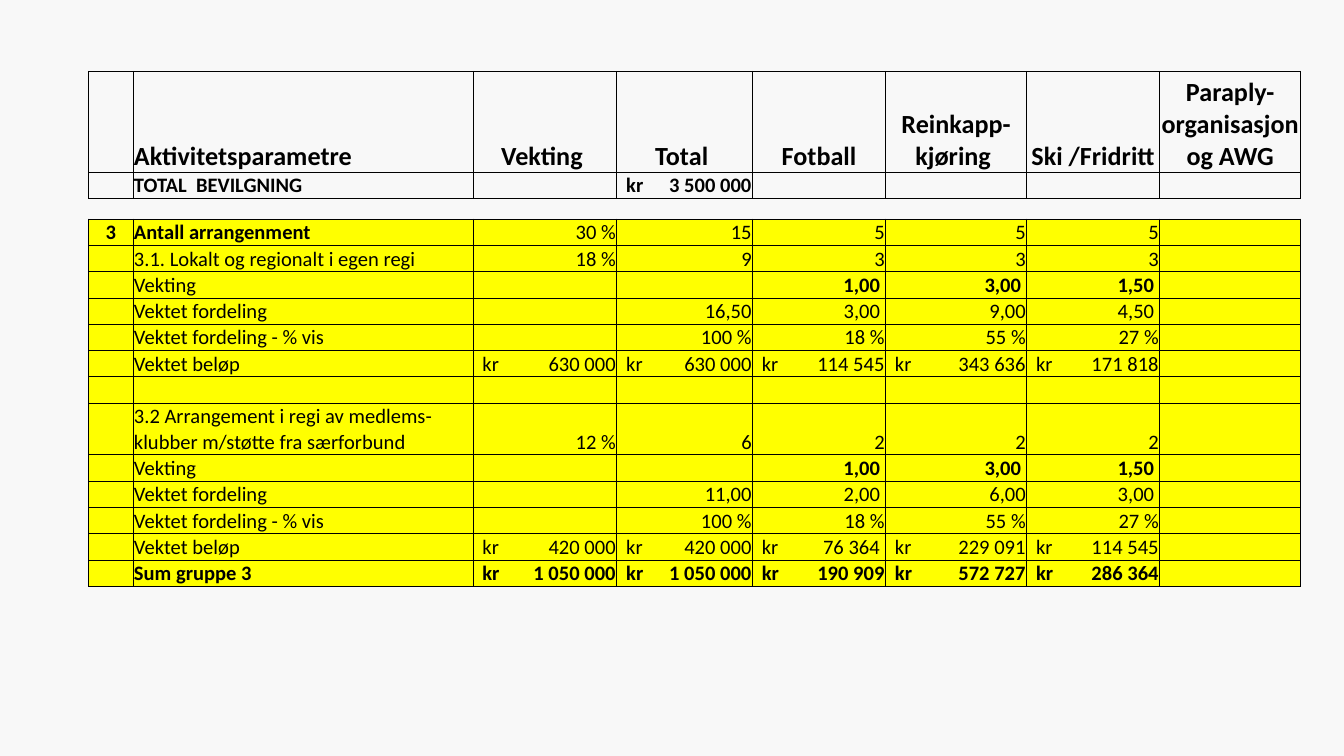
import pptx
import pptx.dml.color
import pptx.enum.text
import pptx.oxml
import pptx.oxml.ns
import pptx.util

Inches, Pt = pptx.util.Inches, pptx.util.Pt
RGBColor = pptx.dml.color.RGBColor
ALIGN = pptx.enum.text.PP_ALIGN

BACKGROUND = RGBColor(0xF8, 0xF8, 0xF8)
YELLOW = RGBColor(0xFF, 0xFF, 0x00)
BLACK = RGBColor(0x00, 0x00, 0x00)

SLIDE_WIDTH = Inches(10)
LEFT, TOP, GAP = 0.66, 0.53, 0.16
COLUMNS = [0.33, 2.53, 1.07, 1.01, 0.99, 1.05, 0.99, 1.05]
ROW = 0.19
HEADER_ROW = 0.75
KR_INSET = 0.07
EDGE = 0.5 / 72  # half a point, in inches

ALL, LABEL, VALUES, NONE = range(8), range(2), range(2, 8), range(0)

# Each row: its cells and the columns set in bold
budget = [
    (["", "Aktivitetsparametre", "Vekting ", "Total ", "Fotball",
      "Reinkapp-kjøring ", "Ski /Fridritt", "Paraply-organisasjon og AWG"], ALL),
    (["", "TOTAL  BEVILGNING", "", "kr\t3 500 000", "", "", "", ""], ALL),
]
events = [
    (["3", "Antall arrangenment", "30 %", "15", "5", "5", "5", ""], LABEL),
    (["", "3.1. Lokalt og regionalt i egen regi", "18 %", "9", "3", "3", "3", ""], NONE),
    (["", "Vekting", "", "", "1,00 ", "3,00 ", "1,50 ", ""], VALUES),
    (["", "Vektet fordeling", "", "16,50", "3,00 ", "9,00", "4,50 ", ""], NONE),
    (["", "Vektet fordeling - % vis", "", "100 %", "18 %", "55 %", "27 %", ""], NONE),
    (["", "Vektet beløp", "kr\t630 000", "kr\t630 000", "kr\t114 545",
      "kr\t343 636", "kr\t171 818", ""], NONE),
    ([""] * 8, NONE),
    (["", "3.2 Arrangement i regi av medlems-klubber m/støtte fra særforbund",
      "12 %", "6", "2", "2", "2", ""], NONE),
    (["", "Vekting", "", "", "1,00 ", "3,00 ", "1,50 ", ""], VALUES),
    (["", "Vektet fordeling", "", "11,00", "2,00 ", "6,00", "3,00 ", ""], NONE),
    (["", "Vektet fordeling - % vis", "", "100 %", "18 %", "55 %", "27 %", ""], NONE),
    (["", "Vektet beløp", "kr\t420 000", "kr\t420 000", "kr\t76 364 ",
      "kr\t229 091", "kr\t114 545", ""], NONE),
    (["", "Sum gruppe 3", "kr\t1 050 000", "kr\t1 050 000", "kr\t190 909",
      "kr\t572 727", "kr\t286 364", ""], ALL),
]
budget_heights = [HEADER_ROW, ROW]
events_heights = [ROW] * 7 + [2 * ROW] + [ROW] * 5
events_top = TOP + sum(budget_heights) + GAP


def add_borders(cell):
    properties = cell._tc.get_or_add_tcPr()
    for side in ("lnL", "lnR", "lnT", "lnB"):
        properties.append(pptx.oxml.parse_xml(
            f'<a:{side} {pptx.oxml.ns.nsdecls("a")} w="{Pt(0.5)}"><a:solidFill>'
            f'<a:srgbClr val="{BLACK}"/></a:solidFill></a:{side}>'))


def add_right_tab(paragraph, position):
    paragraph._p.get_or_add_pPr().append(pptx.oxml.parse_xml(
        f'<a:tabLst {pptx.oxml.ns.nsdecls("a")}>'
        f'<a:tab pos="{Inches(position)}" algn="r"/></a:tabLst>'))


presentation = pptx.Presentation()
presentation.slide_width = SLIDE_WIDTH
presentation.slide_height = SLIDE_WIDTH * 9 // 16
slide = presentation.slides.add_slide(presentation.slide_layouts[6])
slide.background.fill.solid()
slide.background.fill.fore_color.rgb = BACKGROUND

for top, rows, heights, fill in (
    (TOP, budget, budget_heights, None),
    (events_top, events, events_heights, YELLOW),
):
    table = slide.shapes.add_table(
        len(rows), len(COLUMNS), Inches(LEFT), Inches(top),
        Inches(sum(COLUMNS)), Inches(sum(heights))).table
    table.first_row = table.horz_banding = False
    for column, width in zip(table.columns, COLUMNS):
        column.width = Inches(width)
    for r, ((texts, bold_columns), height) in enumerate(zip(rows, heights)):
        table.rows[r].height = Inches(height)
        is_header = rows is budget and r == 0
        size = Pt(14 if is_header else 11)
        for c, text in enumerate(texts):
            cell = table.cell(r, c)
            add_borders(cell)
            if fill is None:
                cell.fill.background()
            else:
                cell.fill.solid()
                cell.fill.fore_color.rgb = fill
            cell.vertical_anchor = pptx.enum.text.MSO_ANCHOR.BOTTOM
            cell.margin_left = cell.margin_right = cell.margin_top = Inches(EDGE)
            cell.margin_bottom = 0
            cell.text_frame.text = text
            paragraph = cell.text_frame.paragraphs[0]
            if "\t" in text:
                cell.margin_left = Inches(KR_INSET)
                paragraph.alignment = ALIGN.LEFT
                add_right_tab(paragraph, COLUMNS[c] - KR_INSET - EDGE)
            elif c == 1:
                paragraph.alignment = ALIGN.LEFT
            elif c == 0 or is_header:
                paragraph.alignment = ALIGN.CENTER
            else:
                paragraph.alignment = ALIGN.RIGHT
            for run in paragraph.runs:
                run.font.name = "Calibri"
                run.font.size = size
                run.font.bold = c in bold_columns
                run.font.color.rgb = BLACK
            if not text:
                # The end mark keeps an empty cell from growing its row
                paragraph._p.get_or_add_endParaRPr().set("sz", str(int(size.pt * 100)))

presentation.save("out.pptx")
